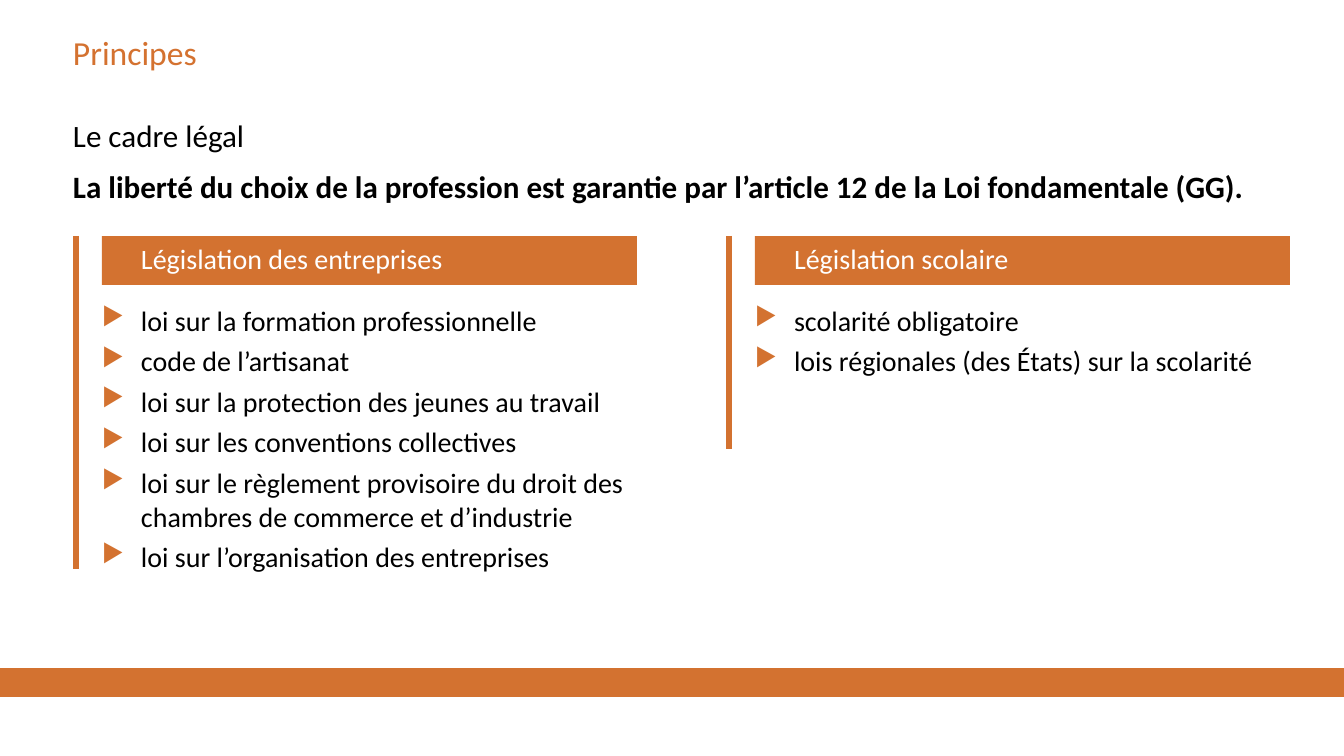
from dataclasses import dataclass
from typing import Any

from lxml import etree
from pptx import Presentation
from pptx import util as u
from pptx.dml.color import RGBColor
from pptx.enum import shapes, text
from pptx.oxml.ns import qn

EMU_PER_PX = 914400 / 100.8
ORANGE, BLACK, WHITE = "D37230", "000000", "FFFFFF"
FONT = "Calibri"
COLUMN_TOP, COLUMN_WIDTH = 236, 535
HEADING_HEIGHT, LAWS_TOP, LAWS_HEIGHT = 49, 303, 288
INDENT, RULE_GAP = 39, 26


@dataclass(frozen=True)
class Line:
    words: str
    size: float
    color: str = BLACK
    bold: bool = False


@dataclass(frozen=True)
class Column:
    left: int
    rule_height: int
    heading: str
    laws: list[str]


COLUMNS = [
    Column(102, 333, "Législation des entreprises", [
        "loi sur la formation professionnelle",
        "code de l’artisanat",
        "loi sur la protection des jeunes au travail",
        "loi sur les conventions collectives",
        "loi sur le règlement provisoire du droit des chambres de commerce et d’industrie",
        "loi sur l’organisation des entreprises",
    ]),
    Column(755, 213, "Législation scolaire", [
        "scolarité obligatoire",
        "lois régionales (des États) sur la scolarité",
    ]),
]


def px(length: int) -> u.Emu:
    return u.Emu(round(length * EMU_PER_PX))


def rgb(color: str) -> RGBColor:
    return RGBColor.from_string(color)


def add_bullet(paragraph: Any) -> None:
    props = paragraph._p.get_or_add_pPr()
    props.set("marL", str(px(INDENT)))
    props.set("indent", str(-px(INDENT)))
    bullet_color = etree.SubElement(props, qn("a:buClr"))
    etree.SubElement(bullet_color, qn("a:srgbClr"), val=ORANGE)
    etree.SubElement(props, qn("a:buSzPct"), val="90000")
    etree.SubElement(props, qn("a:buChar"), char="▶")


def write(frame: Any, lines: list[Line], gap: int = 0, bullets: bool = False,
          inset: int = 0) -> None:
    frame_format = {"word_wrap": True, "margin_left": px(inset), "margin_top": 0,
                    "margin_right": 0, "margin_bottom": 0}
    for name, value in frame_format.items():
        setattr(frame, name, value)
    for number, line in enumerate(lines):
        paragraph = frame.add_paragraph() if number else frame.paragraphs[0]
        if bullets:
            add_bullet(paragraph)
        if number:
            paragraph.space_before = u.Pt(gap)
        paragraph.alignment = text.PP_ALIGN.LEFT
        run = paragraph.add_run()
        run.text = line.words
        font_format = {"name": FONT, "size": u.Pt(line.size), "bold": line.bold}
        for name, value in font_format.items():
            setattr(run.font, name, value)
        run.font.color.rgb = rgb(line.color)


def add_text(slide: Any, left: int, top: int, width: int, height: int,
             lines: list[Line], gap: int = 0, bullets: bool = False) -> None:
    box = slide.shapes.add_textbox(px(left), px(top), px(width), px(height))
    write(box.text_frame, lines, gap, bullets)


def add_band(slide: Any, left: int, top: int, width: int, height: int) -> Any:
    band = slide.shapes.add_shape(shapes.MSO_SHAPE.RECTANGLE,
                                  px(left), px(top), px(width), px(height))
    band.shadow.inherit = False
    band.fill.solid()
    band.fill.fore_color.rgb = rgb(ORANGE)
    band.line.fill.background()
    return band


def add_rule(slide: Any, x: int, top: int, height: int) -> None:
    rule = slide.shapes.add_connector(shapes.MSO_CONNECTOR.STRAIGHT,
                                      px(x), px(top), px(x), px(top + height))
    rule.line.color.rgb = rgb(ORANGE)
    rule.line.width = u.Pt(4.5)
    etree.SubElement(rule._element.spPr, qn("a:effectLst"))


def add_column(slide: Any, column: Column) -> None:
    heading = add_band(slide, column.left, COLUMN_TOP, COLUMN_WIDTH, HEADING_HEIGHT)
    write(heading.text_frame, [Line(column.heading, 20, WHITE)], inset=INDENT)
    heading.text_frame.vertical_anchor = text.MSO_ANCHOR.MIDDLE
    heading.text_frame.paragraphs[0].line_spacing = 0.9
    add_text(slide, column.left, LAWS_TOP, COLUMN_WIDTH, LAWS_HEIGHT,
             [Line(law, 20) for law in column.laws], gap=5, bullets=True)
    add_rule(slide, column.left - RULE_GAP, COLUMN_TOP, column.rule_height)


def main() -> None:
    deck = Presentation()
    deck.slide_width, deck.slide_height = px(1344), px(756)
    slide = deck.slides.add_slide(deck.slide_layouts[6])

    # Footer band
    add_band(slide, 0, 668, 1344, 29)

    # Title and introduction
    add_text(slide, 73, 32, 992, 49, [Line("Principes", 24, "D47230")])
    add_text(slide, 73, 116, 1219, 111, [
        Line("Le cadre légal", 22.2),
        Line("La liberté du choix de la profession est garantie par "
             "l’article 12 de la Loi fondamentale (GG).", 22.2, bold=True),
    ], gap=10)

    # Two bodies of law
    for column in COLUMNS:
        add_column(slide, column)

    deck.save("out.pptx")


if __name__ == "__main__":
    main()
